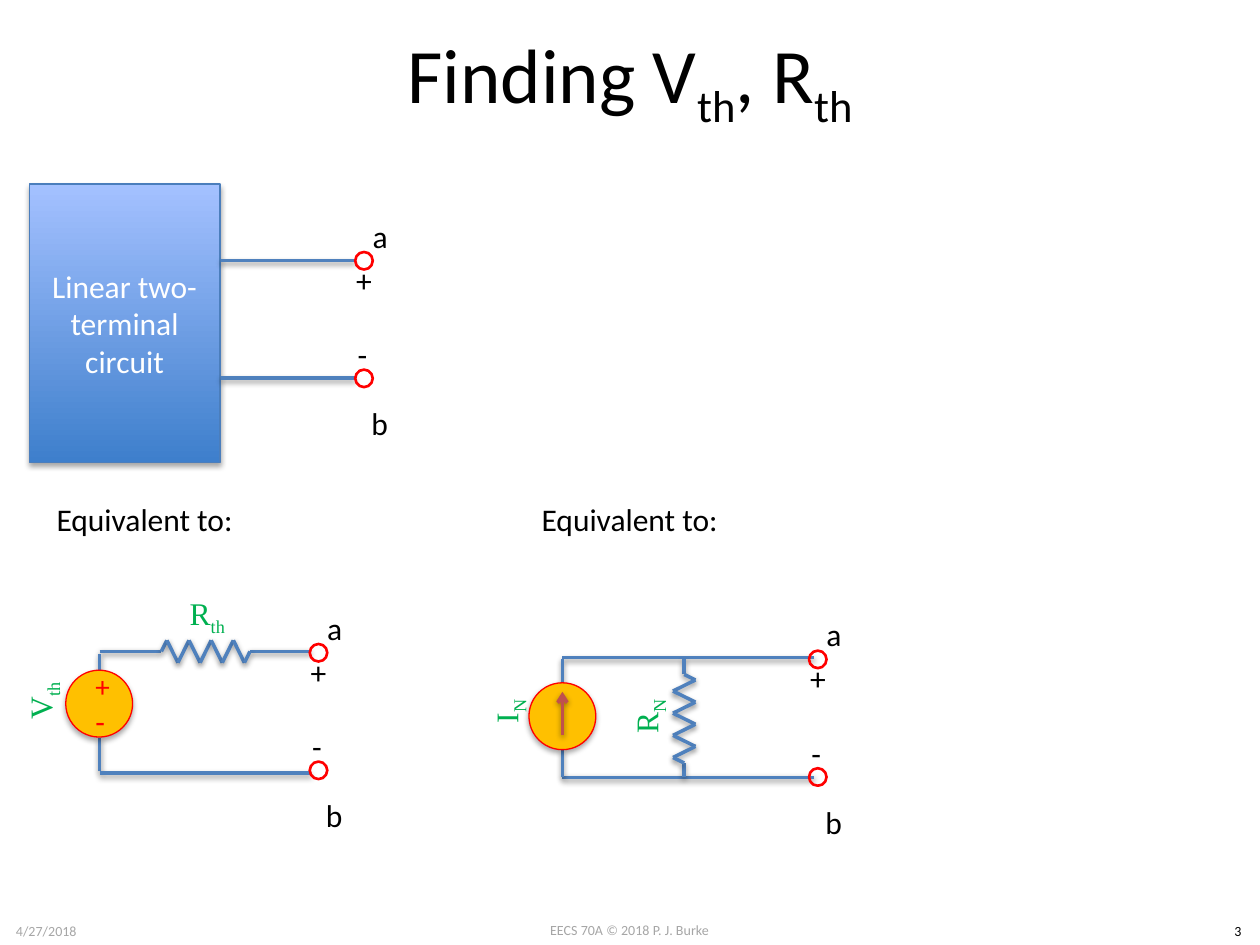
from lxml.etree import SubElement
from pptx import Presentation
from pptx.dml.color import RGBColor
from pptx.enum.shapes import MSO_CONNECTOR, MSO_SHAPE
from pptx.enum.text import MSO_ANCHOR, PP_ALIGN
from pptx.oxml.ns import qn
from pptx.util import Pt

BLACK, WHITE, GRAY = "000000", "FFFFFF", "A6A6A6"
RED, GREEN, BLUE, AMBER, BRICK = "FF0000", "00B050", "4F81BD", "FFC000", "C0504D"
SERIF = "Times New Roman"
color = RGBColor.from_string

deck = Presentation()
deck.slide_width, deck.slide_height = Pt(720), Pt(540)
page = deck.slides.add_slide(deck.slide_layouts[5])
shapes = page.shapes


def write_text(shape, text, size=18, fill=BLACK, font="Calibri",
               align=PP_ALIGN.CENTER, anchor=MSO_ANCHOR.MIDDLE, wrap=True):
    """Fill the shape with text; every second part between underscores is a subscript."""
    frame = shape.text_frame
    for name, value in {"word_wrap": wrap, "vertical_anchor": anchor}.items():
        setattr(frame, name, value)
    para = frame.paragraphs[0]
    para.alignment = align
    for index, part in enumerate(text.split("_")):
        if not part:
            continue
        span = para.add_run()
        span.text = part
        for name, value in {"size": Pt(size), "name": font}.items():
            setattr(span.font, name, value)
        span.font.color.rgb = color(fill)
        if index % 2:
            span.font._element.set("baseline", "-25000")


def add_wire(x1, y1, x2, y2, stroke=BLUE):
    # Wires keep the soft shadow of the theme
    wire = shapes.add_connector(MSO_CONNECTOR.STRAIGHT, Pt(x1), Pt(y1), Pt(x2), Pt(y2))
    wire.line.color.rgb = color(stroke)
    wire.line.width = Pt(2)
    return wire


title = shapes.title
for name, value in {"left": 36, "top": 0, "width": 648, "height": 90}.items():
    setattr(title, name, Pt(value))
write_text(title, "Finding V_th_, R_th", size=44)

# The theme gives this box its blue gradient and shadow
circuit = shapes.add_shape(MSO_SHAPE.RECTANGLE, Pt(16.7), Pt(105.2), Pt(109), Pt(159))
circuit.line.color.rgb = color("4B7EBC")
circuit.line.width = Pt(0.75)
write_text(circuit, "Linear two-terminal circuit", fill=WHITE)

wires = [
    # two-terminal circuit
    (126, 149, 203, 149), (126, 216, 203, 216),
    # Thevenin equivalent
    (57, 372.3, 92.2, 372.3), (142.8, 372.3, 178, 372.3),
    (57, 440.6, 57, 421.5), (57, 383, 57, 373.5), (57, 441.8, 178, 441.8),
    # Norton equivalent
    (321.4, 444.2, 465, 444.2), (321.4, 375.8, 465, 375.8),
    (391, 385.4, 391, 376.5), (391, 444.2, 391, 436),
    (321.4, 390.2, 321.4, 376.5), (321.4, 428.4, 321.4, 444.2),
]
for ends in wires:
    add_wire(*ends)

# Each resistor is a zigzag of eight peaks between two half steps
STEP, PEAK = 6.33, 6.4
zigzag = [(0, 0)]
zigzag += [(STEP * (i + 0.5), PEAK if i % 2 else -PEAK) for i in range(8)]
zigzag += [(STEP * 8, 0)]
for (along1, side1), (along2, side2) in zip(zigzag, zigzag[1:]):
    add_wire(92.2 + along1, 372.3 + side1, 92.2 + along2, 372.3 + side2)
    add_wire(391 - side1, 385.4 + along1, 391 - side2, 385.4 + along2)

# Voltage and current sources
for left, top in [(37.6, 383), (302.3, 390.2)]:
    source = shapes.add_shape(MSO_SHAPE.OVAL, Pt(left), Pt(top), Pt(38.2), Pt(38.2))
    source.fill.solid()
    source.fill.fore_color.rgb = color(AMBER)
    source.line.color.rgb = color(RED)
    source.line.width = Pt(0.75)
arrow = add_wire(321.4, 420, 321.4, 395.3, BRICK)
SubElement(arrow.line._get_or_add_ln(), qn("a:tailEnd"), type="arrow")

# Centred labels: text, left, top, width, height, rotation, size, colour, font
labels = [
    ("R_th", 75.6, 325.4, 85.7, 52.6, 0, 18, GREEN, SERIF),
    ("V_th", -18.7, 374.4, 85.7, 52.6, 270, 18, GREEN, SERIF),
    ("R_N", 327.6, 383, 85.7, 52.6, 270, 18, GREEN, SERIF),
    ("I_N", 247.7, 380.2, 85.7, 52.6, 270, 18, GREEN, SERIF),
    ("+", 47.5, 380.2, 18.7, 23.8, 0, 16.6, RED, "Calibri"),
    ("-", 47.5, 400.3, 18.7, 23.8, 0, 18, RED, "Calibri"),
    ("EECS 70A © 2018 P. J. Burke", 275.8, 522.7, 168, 17, 0, 8, GRAY, "Calibri"),
    ("4/27/2018", 0, 523.4, 53, 17, 0, 8, GRAY, "Calibri"),
    ("3", 694.8, 523.4, 25.2, 17, 0, 8, BLACK, "Calibri"),
]
for text, left, top, width, height, rotation, size, fill, font in labels:
    box = shapes.add_textbox(Pt(left), Pt(top), Pt(width), Pt(height))
    box.rotation = rotation
    write_text(box, text, size, fill, font)

# Terminal pairs, with their marks placed relative to the upper terminal
notes = [("Equivalent to:", 25.2, 282.2, 116.6), ("Equivalent to:", 302.4, 282.2, 116.6)]
for left, top in [(203, 144), (177, 368), (462.3, 371.8)]:
    for drop in (0, 67.2):
        terminal = shapes.add_shape(MSO_SHAPE.OVAL, Pt(left), Pt(top + drop), Pt(10), Pt(10))
        terminal.shadow.inherit = False
        terminal.fill.background()
        terminal.line.color.rgb = color(RED)
        terminal.line.width = Pt(1.5)
    notes += [
        ("a", left + 2.9, top - 23.8, 23),
        ("b", left + 2.2, top + 83.5, 24.5),
        ("+", left - 6.5, top + 1.4, 23.8),
        ("-", left - 5.8, top + 44, 20.2),
    ]
for text, left, top, width in notes:
    box = shapes.add_textbox(Pt(left), Pt(top), Pt(width), Pt(29))
    write_text(box, text, align=PP_ALIGN.LEFT, anchor=MSO_ANCHOR.TOP, wrap=False)

deck.save("out.pptx")
